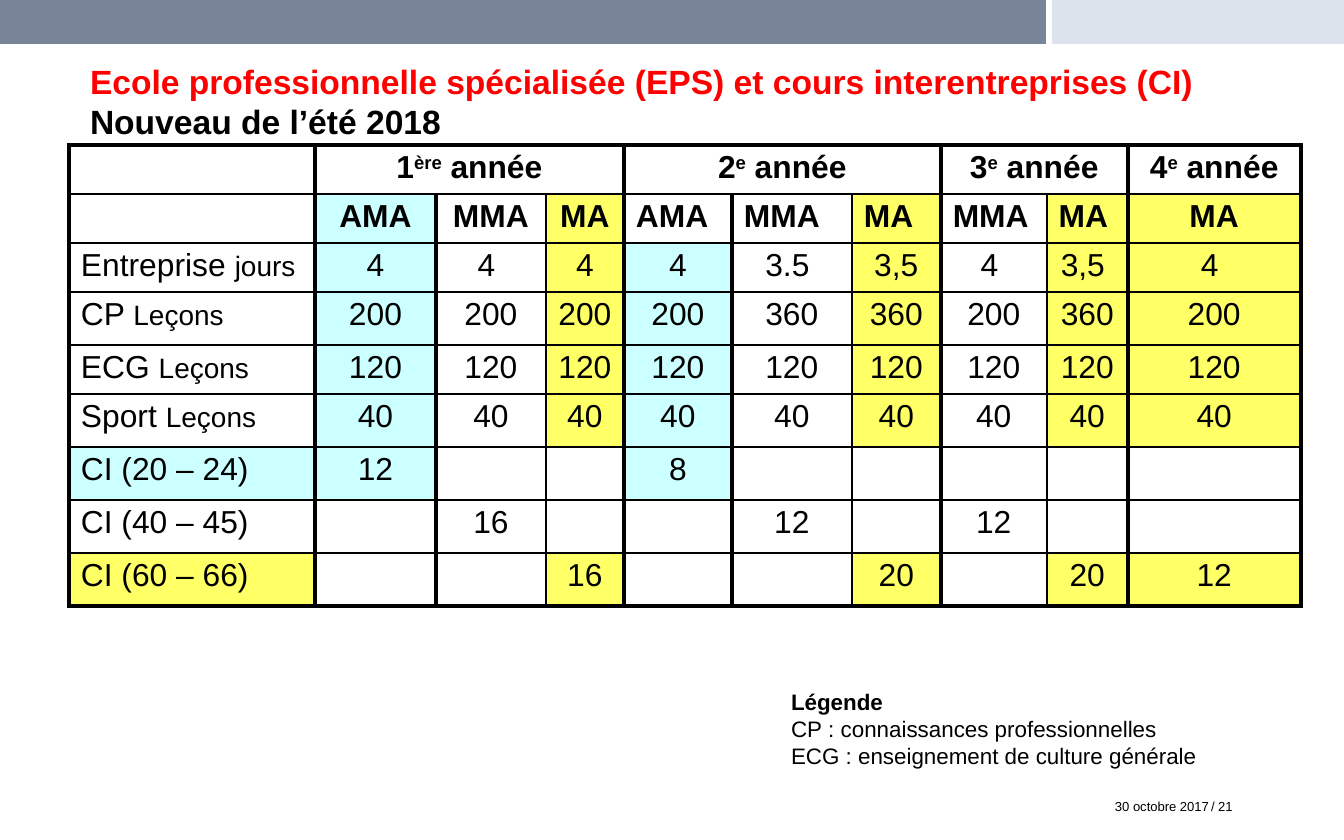
"""Build the slide on school and inter-company course loads by year."""
from lxml import etree
from pptx import Presentation
from pptx.dml.color import RGBColor
from pptx.enum.shapes import MSO_SHAPE
from pptx.enum.text import MSO_ANCHOR, MSO_AUTO_SIZE, PP_ALIGN
from pptx.oxml.ns import qn
from pptx.util import Pt

RECT = MSO_SHAPE.RECTANGLE
TOP = MSO_ANCHOR.TOP
FIXED = MSO_AUTO_SIZE.NONE
LEFT, MID = PP_ALIGN.LEFT, PP_ALIGN.CENTER

PX = 914400 / 134.4
FONT = "Arial"
HEX = {"slate": "788598", "mist": "DCE3EC", "red": "FE0000", "black": "000000",
       "cyan": "CCFFFF", "yellow": "FFFF66"}
TINT = {"AMA": "cyan", "MA": "yellow"}

BARS = [((0, 0, 1046, 44), "slate"), ((1052, 0, 292, 44), "mist")]
TITLE = [("Ecole professionnelle spécialisée (EPS) et cours interentreprises (CI) ", "red"),
         ("Nouveau de l’été 2018", "black")]
KEY = [("Légende", True),
       ("CP\u00a0: connaissances professionnelles", False),
       ("ECG\u00a0: enseignement de culture générale", False)]
FOOT = [((1103, 793, 210, 56), "30 octobre 2017"), ((1199, 793, 104, 56), "/ 21")]

COLS = [246, 121, 110, 78, 108, 120, 89, 106, 81, 173]
ROWS = [49, 49, 49, 53, 49, 53, 53, 53, 53]
YEARS = [(1, 3, "1", "ère"), (4, 3, "2", "e"), (7, 2, "3", "e"), (9, 1, "4", "e")]
HEADS = ["", "AMA", "MMA", "MA", "AMA", "MMA", "MA", "MMA", "MA", "MA"]
LEFT_HEADS = range(4, 9)
DATA = [
    (("Entreprise ", "jours"), None, ["4", "4 ", "4", "4", "3.5 ", "3,5", "4 ", "3,5 ", "4 "]),
    (("CP ", "Leçons"), None, ["200", "200", "200 ", "200", "360", "360", "200", "360", "200"]),
    (("ECG ", "Leçons"), None, ["120"] * 9),
    (("Sport ", "Leçons"), None, ["40"] * 9),
    (("CI (20 – 24)", ""), "cyan", ["12", "", "", "8", "", "", "", "", ""]),
    (("CI (40 – 45)", ""), None, ["", "16", "", "", "12", "", "12", "", ""]),
    (("CI (60 – 66)", ""), "yellow", ["", "", "16", "", "", "20", "", "20", "12"]),
]


def emu(*vals):
    return [round(v * PX) for v in vals]


def add_run(para, text, size, bold=False, tone="black", sup=False):
    run = para.add_run()
    run.text = text
    font = run.font
    font.name, font.size, font.bold = FONT, Pt(size), bold
    font.color.rgb = RGBColor.from_string(HEX[tone])
    if sup:
        run._r.get_or_add_rPr().set("baseline", "30000")


def set_pad(box, side, edge):
    box.margin_left = box.margin_right = round(side * PX)
    box.margin_top = box.margin_bottom = round(edge * PX)


def set_frame(shape, side=12, edge=5):
    frame = shape.text_frame
    frame.word_wrap = True
    frame.auto_size = FIXED
    frame.vertical_anchor = TOP
    set_pad(frame, side, edge)
    return frame


def add_bars(slide):
    for box, tone in BARS:
        bar = slide.shapes.add_shape(RECT, *emu(*box))
        bar.shadow.inherit = False
        bar.fill.solid()
        bar.fill.fore_color.rgb = RGBColor.from_string(HEX[tone])
        bar.line.fill.background()


def add_title(slide):
    title = slide.shapes.title
    title.left, title.top, title.width, title.height = emu(78, 56, 1190, 88)
    para = set_frame(title).paragraphs[0]
    para.alignment = LEFT
    para.line_spacing = 1.0
    for text, tone in TITLE:
        add_run(para, text, 18, True, tone)


def add_key(slide):
    frame = set_frame(slide.shapes.add_textbox(*emu(778, 681, 484, 95)), 13, 7)
    for i, (text, bold) in enumerate(KEY):
        para = frame.add_paragraph() if i else frame.paragraphs[0]
        add_run(para, text, 12, bold)


def add_foot(slide):
    for box, text in FOOT:
        para = set_frame(slide.shapes.add_textbox(*emu(*box))).paragraphs[0]
        add_run(para, text, 7)


def set_cell(cell, tone, sides):
    set_pad(cell, 12, 5 if cell.text_frame.text else 3)
    props = cell._tc.get_or_add_tcPr()
    for tag, thick in sides.items():
        line = etree.SubElement(props, qn("a:" + tag), w=str(Pt(2.25 if thick else 1)))
        fill = etree.SubElement(line, qn("a:solidFill"))
        etree.SubElement(fill, qn("a:srgbClr"), val=HEX["black"])
    if tone:
        cell.fill.solid()
        cell.fill.fore_color.rgb = RGBColor.from_string(HEX[tone])
    else:
        cell.fill.background()


def get_tone(r, c):
    if r == 0:
        return None
    if r == 1:
        return None if c == 4 else TINT.get(HEADS[c])
    _, tone, vals = DATA[r - 2]
    if c == 0:
        return tone
    return TINT.get(HEADS[c]) if vals[c - 1] else None


def fill_text(table):
    for c, span, num, sup in YEARS:
        cell = table.cell(0, c)
        if span > 1:
            cell.merge(table.cell(0, c + span - 1))
        para = cell.text_frame.paragraphs[0]
        para.alignment = MID
        add_run(para, num, 17, True)
        add_run(para, sup, 17, True, sup=True)
        add_run(para, " année", 17, True)
    for c, head in enumerate(HEADS):
        if head:
            para = table.cell(1, c).text_frame.paragraphs[0]
            para.alignment = LEFT if c in LEFT_HEADS else MID
            add_run(para, head, 17, True)
    for r, ((name, unit), _, vals) in enumerate(DATA, 2):
        para = table.cell(r, 0).text_frame.paragraphs[0]
        add_run(para, name, 17)
        if unit:
            add_run(para, unit, 15)
        for c, val in enumerate(vals, 1):
            if val:
                para = table.cell(r, c).text_frame.paragraphs[0]
                para.alignment = MID
                add_run(para, val, 17)


def add_grid(slide):
    box = emu(69, 145, sum(COLS), sum(ROWS))
    table = slide.shapes.add_table(len(ROWS), len(COLS), *box).table
    table.first_row = table.horz_banding = False
    for col, wide in zip(table.columns, emu(*COLS)):
        col.width = wide
    for row, high in zip(table.rows, emu(*ROWS)):
        row.height = high
    fill_text(table)
    ends = {c: c + span - 1 for c, span, *_ in YEARS}
    for r in range(len(ROWS)):
        for c in range(len(COLS)):
            last = ends.get(c, c) if r == 0 else c
            sides = {"lnL": HEADS[c - 1] != "MMA", "lnR": HEADS[last] != "MMA",
                     "lnT": r == 0, "lnB": r == len(ROWS) - 1}
            set_cell(table.cell(r, c), get_tone(r, c), sides)


def main():
    deck = Presentation()
    deck.slide_width, deck.slide_height = emu(1344, 840)
    slide = deck.slides.add_slide(deck.slide_layouts[5])
    add_bars(slide)
    add_title(slide)
    add_grid(slide)
    add_key(slide)
    add_foot(slide)
    deck.save("out.pptx")


if __name__ == "__main__":
    main()
